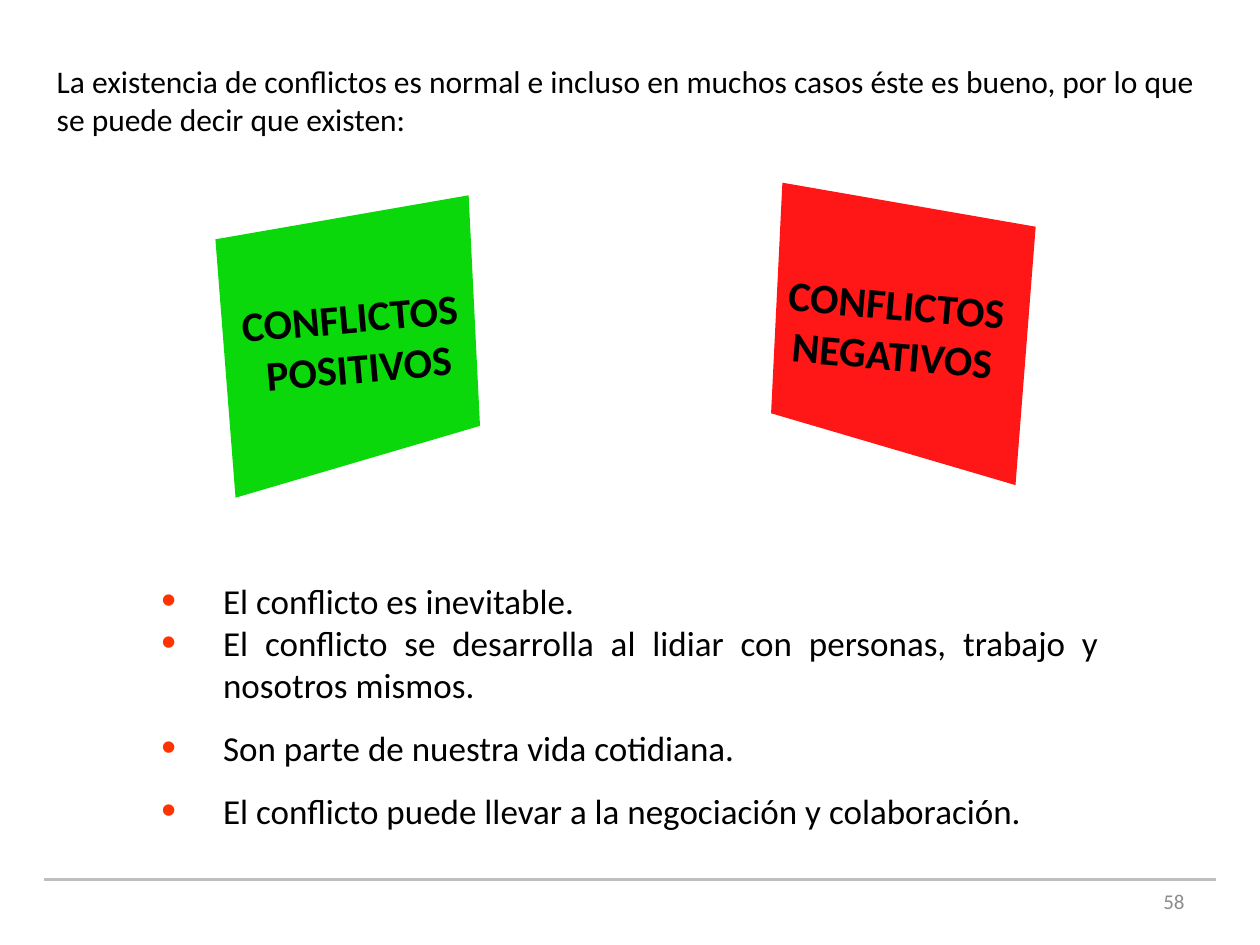
from dataclasses import dataclass

from lxml.etree import SubElement
from pptx import Presentation
from pptx.dml.color import RGBColor
from pptx.enum.text import MSO_ANCHOR as Anchor, MSO_AUTO_SIZE as AutoSize, PP_ALIGN as Align
from pptx.oxml.ns import qn
from pptx.util import Inches, Pt

WIDTH, HEIGHT = Inches(10), Inches(7.5)
FONT = "Calibri"
BLACK = "000000"
MARGIN = 3.5
# Corners and label centre of the left panel, in percent of the slide
CORNERS = [(17.1, 25.33), (37.2, 20.67), (38.1, 45.07), (18.7, 52.67)]
LABEL_CENTER = (28.3, 36.13)
LABEL_SIZE = (21, 12)
TILT = 5
MIRROR_SUM, MIRROR_RISE = 99.3, 1.33


@dataclass
class Box:
    """A rectangle in percent of the slide's width and height."""
    left: float
    top: float
    width: float
    height: float


@dataclass
class Panel:
    lines: list[str]
    fill: str
    mirrored: bool


@dataclass
class Item:
    text: str
    spacing: float = 1.5


PANELS = [
    Panel(["CONFLICTOS ", "POSITIVOS"], "0AD80A", False),
    Panel(["CONFLICTOS NEGATIVOS"], "FF1717", True),
]
ITEMS = [
    Item("El conflicto es inevitable."),
    Item("El conflicto se desarrolla al lidiar con personas, trabajo y nosotros mismos.", 1),
    Item("Son parte de nuestra vida cotidiana."),
    Item("El conflicto puede llevar a la negociación y colaboración."),
]


def color(value: str) -> RGBColor:
    return RGBColor.from_string(value)


def x(share: float) -> int:
    return round(WIDTH * share / 100)


def y(share: float) -> int:
    return round(HEIGHT * share / 100)


def place(s, box: Box) -> None:
    s.left, s.top = x(box.left), y(box.top)
    s.width, s.height = x(box.width), y(box.height)


def write(s, lines: list[str], size: float, align: Align, anchor=Anchor.TOP,
          bold=False, ink=BLACK) -> None:
    tf = s.text_frame
    tf.word_wrap = True
    tf.auto_size = AutoSize.NONE
    tf.vertical_anchor = anchor
    tf.text = "\n".join(lines)
    for p in tf.paragraphs:
        p.alignment = align
        p.space_before = Pt(0)
        for r in p.runs:
            r.font.name, r.font.size, r.font.bold = FONT, Pt(size), bold
            r.font.color.rgb = color(ink)


def add_text(slide, box: Box, *args, **kwargs):
    s = slide.shapes.add_textbox(0, 0, 0, 0)
    place(s, box)
    write(s, *args, **kwargs)
    return s


def add_bullet(p) -> None:
    props = p._p.get_or_add_pPr()
    props.set("marL", str(Inches(0.49)))
    props.set("indent", str(-Inches(0.49)))
    SubElement(SubElement(props, qn("a:buClr")), qn("a:srgbClr"), val="FF3300")
    SubElement(props, qn("a:buSzPct"), val="120000")
    SubElement(props, qn("a:buFont"), typeface="Arial")
    SubElement(props, qn("a:buChar"), char="•")


def add_panel(slide, panel: Panel) -> None:
    """Draw a quadrilateral seen in perspective, with its tilted label."""
    def side(point: tuple[float, float]) -> tuple[float, float]:
        px, py = point
        return (MIRROR_SUM - px, py - MIRROR_RISE) if panel.mirrored else point

    points = [(x(px), y(py)) for px, py in map(side, CORNERS)]
    builder = slide.shapes.build_freeform(*points[0])
    builder.add_line_segments(points[1:], close=True)
    s = builder.convert_to_shape()
    s.shadow.inherit = False
    s.fill.solid()
    s.fill.fore_color.rgb = color(panel.fill)
    s.line.fill.background()

    (cx, cy), (w, h) = side(LABEL_CENTER), LABEL_SIZE
    label = add_text(slide, Box(cx - w / 2, cy - h / 2, w, h), panel.lines, 24,
                     Align.CENTER, Anchor.MIDDLE, bold=True)
    label.rotation = TILT if panel.mirrored else -TILT


def add_rule(slide, level: float) -> None:
    s = slide.shapes.add_connector(1, x(MARGIN), y(level), x(100 - MARGIN), y(level))
    s.line.color.rgb = color("BFBFBF")
    s.line.width = Pt(2)
    SubElement(s._element.spPr, qn("a:effectLst"))


def main() -> None:
    prs = Presentation()
    prs.slide_width, prs.slide_height = WIDTH, HEIGHT
    slide = prs.slides.add_slide(prs.slide_layouts[1])
    add_rule(slide, 93.07)

    title = slide.shapes.title
    place(title, Box(MARGIN, 5.87, 92.9, 9.47))
    write(title, ["La existencia de conflictos es normal e incluso en muchos casos "
                  "éste es bueno, por lo que se puede decir que existen:"], 18, Align.LEFT)

    for panel in PANELS:
        add_panel(slide, panel)

    body = slide.placeholders[1]
    place(body, Box(11.8, 58.4, 76.4, 29.87))
    write(body, [item.text for item in ITEMS], 20, Align.JUSTIFY)
    for p, item in zip(body.text_frame.paragraphs, ITEMS):
        add_bullet(p)
        p.line_spacing = float(item.spacing)

    add_text(slide, Box(71.7, 92.67, 23.3, 5.33), ["58"], 12, Align.RIGHT,
             Anchor.MIDDLE, ink="8C8C8C")
    prs.save("out.pptx")


if __name__ == "__main__":
    main()
